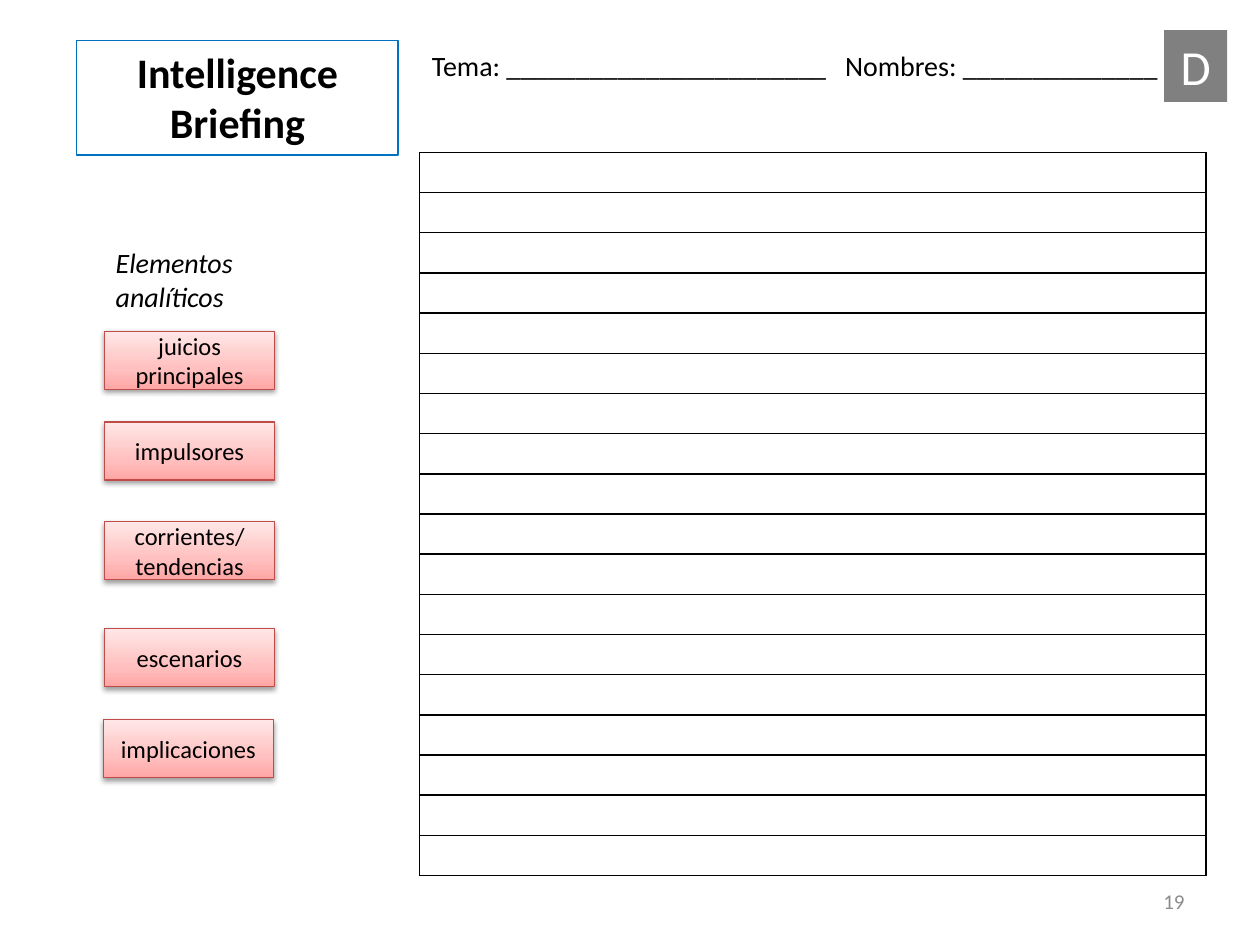
"""Builds the Intelligence Briefing worksheet slide."""
from lxml import etree
from pptx import Presentation, util as u
from pptx.dml.color import RGBColor
from pptx.enum import shapes, text
from pptx.oxml.ns import qn

WIDTH, HEIGHT = 10, 7.5
TITLE = "Intelligence Briefing"
FIELDS = "Tema: _______________________\tNombres: ______________"
NOMBRES_STOP = 3.28
HEADING = "Elementos\vanalíticos"
ELEMENTS = [
    ("juicios principales", 0.83, 2.63),
    ("impulsores", 0.83, 3.35),
    ("corrientes/ tendencias", 0.83, 4.14),
    ("escenarios", 0.83, 4.99),
    ("implicaciones", 0.82, 5.71),
]
ELEMENT_SIZE = (1.35, 0.46)
ELEMENT_STOPS = [(0, "FFA6A5"), (35, "FFC0BF"), (100, "FFE7E7")]
LINED_ROWS = 18
SHEET = (3.33, 0.89, 6.24, 6.38)

ALIGN = {"l": text.PP_ALIGN.LEFT, "c": text.PP_ALIGN.CENTER, "r": text.PP_ALIGN.RIGHT}


def rgb(value):
    return RGBColor.from_string(value)


def inches(*lengths):
    return [u.Inches(length) for length in lengths]


def child(parent, tag, **attributes):
    return etree.SubElement(parent, qn(tag), {k: str(v) for k, v in attributes.items()})


def write(holder, words, size=14, color="000000", bold=False, italic=False,
          align="l", middle=False, wrap=True):
    frame = holder.text_frame
    frame.word_wrap = wrap
    frame.vertical_anchor = text.MSO_ANCHOR.MIDDLE if middle else text.MSO_ANCHOR.TOP
    frame.text = words
    paragraph = frame.paragraphs[0]
    paragraph.alignment = ALIGN[align]
    for run in paragraph.runs:
        font = run.font
        font.name, font.size, font.bold, font.italic = "Calibri", u.Pt(size), bold, italic
        font.color.rgb = rgb(color)
    return paragraph


def add_label(slide, place, words, **style):
    return write(slide.shapes.add_textbox(*inches(*place)), words, **style)


def add_box(slide, place, words, fill=None, line=None, **style):
    box = slide.shapes.add_shape(shapes.MSO_SHAPE.RECTANGLE, *inches(*place))
    box.shadow.inherit = False
    if fill:
        box.fill.solid()
        box.fill.fore_color.rgb = rgb(fill)
    else:
        box.fill.background()
    if line:
        box.line.color.rgb = rgb(line)
        box.line.width = u.Pt(0.75)
    else:
        box.line.fill.background()
    write(box, words, align="c", **style)
    return box


def shade(box):
    box.fill.gradient()
    box.fill.gradient_angle = 90
    properties = box._element.spPr
    stops = properties.find(qn("a:gradFill")).find(qn("a:gsLst"))
    for stop in list(stops):
        stops.remove(stop)
    for share, color in ELEMENT_STOPS:
        child(child(stops, "a:gs", pos=share * 1000), "a:srgbClr", val=color)
    shadow = child(properties.find(qn("a:effectLst")), "a:outerShdw", blurRad=u.Pt(3.1),
                   dist=u.Pt(1.6), dir=90 * 60000, rotWithShape=0)
    child(child(shadow, "a:srgbClr", val="000000"), "a:alpha", val=38000)


def add_sheet(slide):
    count = LINED_ROWS + 2
    frame = slide.shapes.add_table(count, 1, *inches(*SHEET))
    for index, row in enumerate(frame.table.rows):
        row.height = u.Inches(SHEET[3] / count)
        cell = row.cells[0]
        cell.margin_top = cell.margin_bottom = 0
        lined = 0 < index < count - 1
        visible = {"a:lnL": lined, "a:lnR": lined,
                   "a:lnT": index > 0, "a:lnB": index < count - 1}
        for edge, shown in visible.items():
            line = child(cell._tc.get_or_add_tcPr(), edge, w=u.Pt(1))
            if shown:
                child(child(line, "a:solidFill"), "a:srgbClr", val="000000")
            else:
                child(line, "a:noFill")
        cell.fill.background()


def main():
    deck = Presentation()
    deck.slide_width, deck.slide_height = inches(WIDTH, HEIGHT)
    slide = deck.slides.add_slide(deck.slide_layouts[6])

    add_sheet(slide)
    add_box(slide, (0.61, 0.32, 2.55, 0.91), TITLE, line="0070C0", size=24, bold=True)
    fields = add_label(slide, (3.33, 0.34, 6.05, 0.37), FIELDS, size=16)
    tabs = child(fields._p.get_or_add_pPr(), "a:tabLst")
    child(tabs, "a:tab", pos=u.Inches(NOMBRES_STOP), algn="l")
    add_label(slide, (0.82, 1.9, 1.14, 0.64), HEADING, size=16, italic=True, wrap=False)
    add_box(slide, (9.24, 0.24, 0.5, 0.57), "D", fill="808080", size=28, color="FFFFFF")
    add_label(slide, (7.17, 6.95, 2.33, 0.4), "19", size=12, color="8C8C8C",
              align="r", middle=True)
    for words, left, top in ELEMENTS:
        shade(add_box(slide, (left, top, *ELEMENT_SIZE), words, line="BF4C48", middle=True))

    deck.save("out.pptx")


if __name__ == "__main__":
    main()
